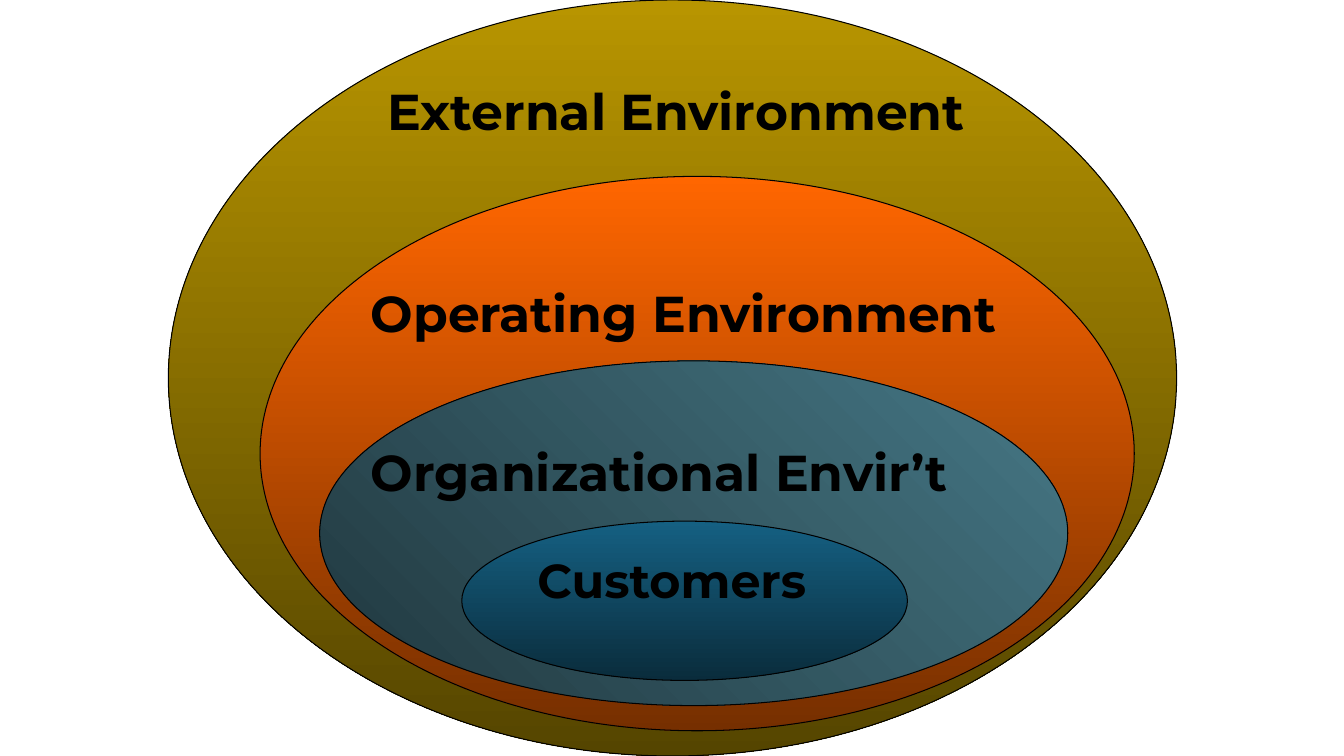
from dataclasses import dataclass

from pptx import Presentation
from pptx.dml.color import RGBColor
from pptx.enum.shapes import MSO_SHAPE
from pptx.enum.text import MSO_AUTO_SIZE, PP_ALIGN
from pptx.slide import Slide
from pptx.util import Inches, Pt


@dataclass(frozen=True)
class Theme:
    font: str = "Montserrat"
    ink: str = "000000"
    gold: tuple[str, str] = ("B89500", "554500")
    orange: tuple[str, str] = ("FF6600", "762F00")
    teal: tuple[str, str] = ("20373E", "467886")
    blue: tuple[str, str] = ("156082", "0A2C3C")
    label_size: float = 36
    core_size: float = 34
    outline: float = 0.75


@dataclass(frozen=True)
class Box:
    left: float
    top: float
    width: float
    height: float

    def lengths(self) -> list[int]:
        return [Inches(v) for v in (self.left, self.top, self.width, self.height)]


@dataclass(frozen=True)
class Layer:
    oval: Box
    colors: tuple[str, str]
    label: str
    label_box: Box
    angle: float = 270
    size: float = Theme.label_size
    align: PP_ALIGN = PP_ALIGN.CENTER


THEME = Theme()
LAYERS = [
    Layer(Box(1.67, 0, 10, 7.5), THEME.gold,
          "External Environment", Box(3.08, 0.75, 7.25, 0.7)),
    Layer(Box(2.58, 1.75, 8.67, 5.5), THEME.orange,
          "Operating Environment", Box(3.58, 2.75, 6.75, 0.7),
          align=PP_ALIGN.LEFT),
    Layer(Box(3.17, 3.58, 7.42, 3.42), THEME.teal,
          "Organizational Envir’t", Box(3.58, 4.33, 6.42, 0.7),
          angle=45, align=PP_ALIGN.LEFT),
    Layer(Box(4.58, 5.17, 4.42, 1.58), THEME.blue,
          "Customers", Box(5, 5.42, 3.33, 0.67), size=THEME.core_size),
]


def add_oval(s: Slide, layer: Layer) -> None:
    sp = s.shapes.add_shape(MSO_SHAPE.OVAL, *layer.oval.lengths())
    sp.shadow.inherit = False
    sp.fill.gradient()
    sp.fill.gradient_angle = layer.angle
    for stop, color in zip(sp.fill.gradient_stops, layer.colors):
        stop.color.rgb = RGBColor.from_string(color)
    sp.line.color.rgb = RGBColor.from_string(THEME.ink)
    sp.line.width = Pt(THEME.outline)


def add_label(s: Slide, text: str, *, box: Box, size: float, align: PP_ALIGN) -> None:
    tf = s.shapes.add_textbox(*box.lengths()).text_frame
    tf.word_wrap = True
    tf.auto_size = MSO_AUTO_SIZE.SHAPE_TO_FIT_TEXT
    p = tf.paragraphs[0]
    p.alignment = align
    r = p.add_run()
    r.text = text
    r.font.name = THEME.font
    r.font.size = Pt(size)
    r.font.bold = True
    r.font.color.rgb = RGBColor.from_string(THEME.ink)


def main() -> None:
    prs = Presentation()
    prs.slide_width, prs.slide_height = Inches(13.33), Inches(7.5)
    s = prs.slides.add_slide(prs.slide_layouts[6])
    for layer in LAYERS:
        add_oval(s, layer)
    for layer in reversed(LAYERS):
        add_label(s, layer.label, box=layer.label_box, size=layer.size, align=layer.align)
    prs.save("out.pptx")


if __name__ == "__main__":
    main()
